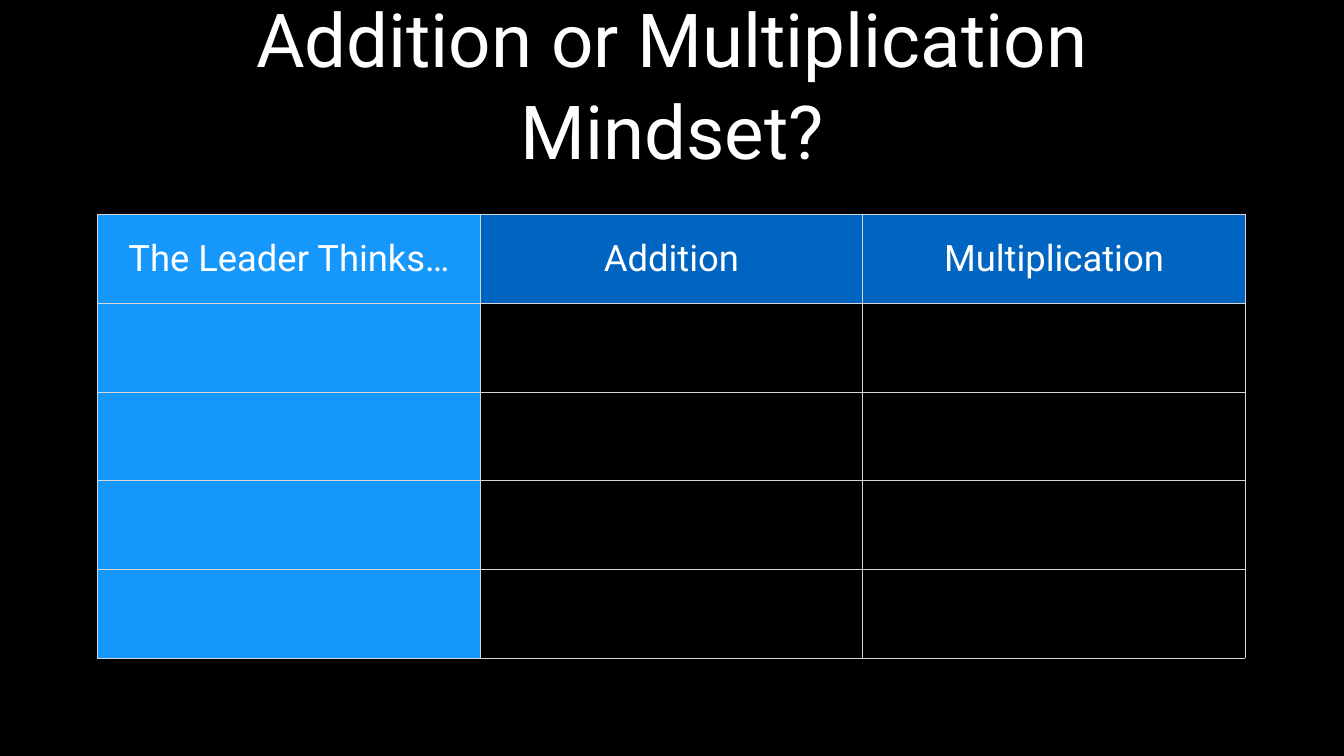
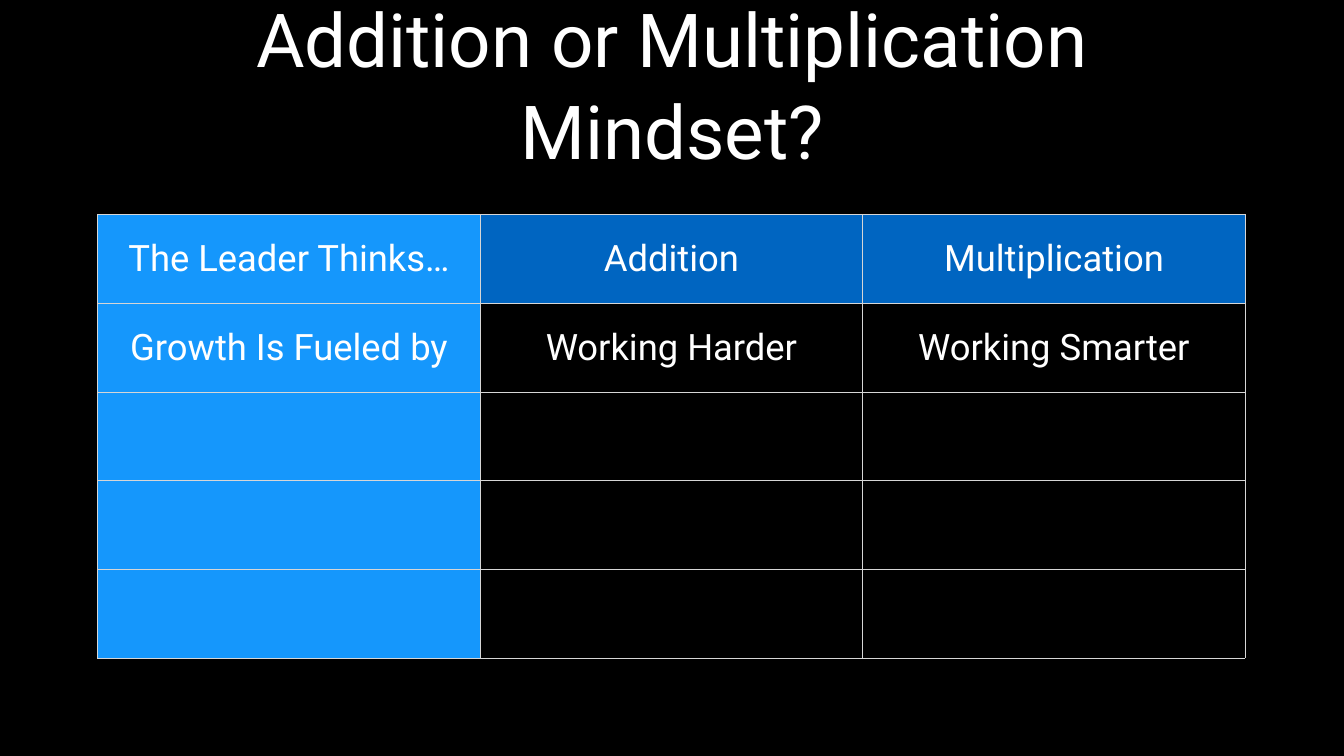
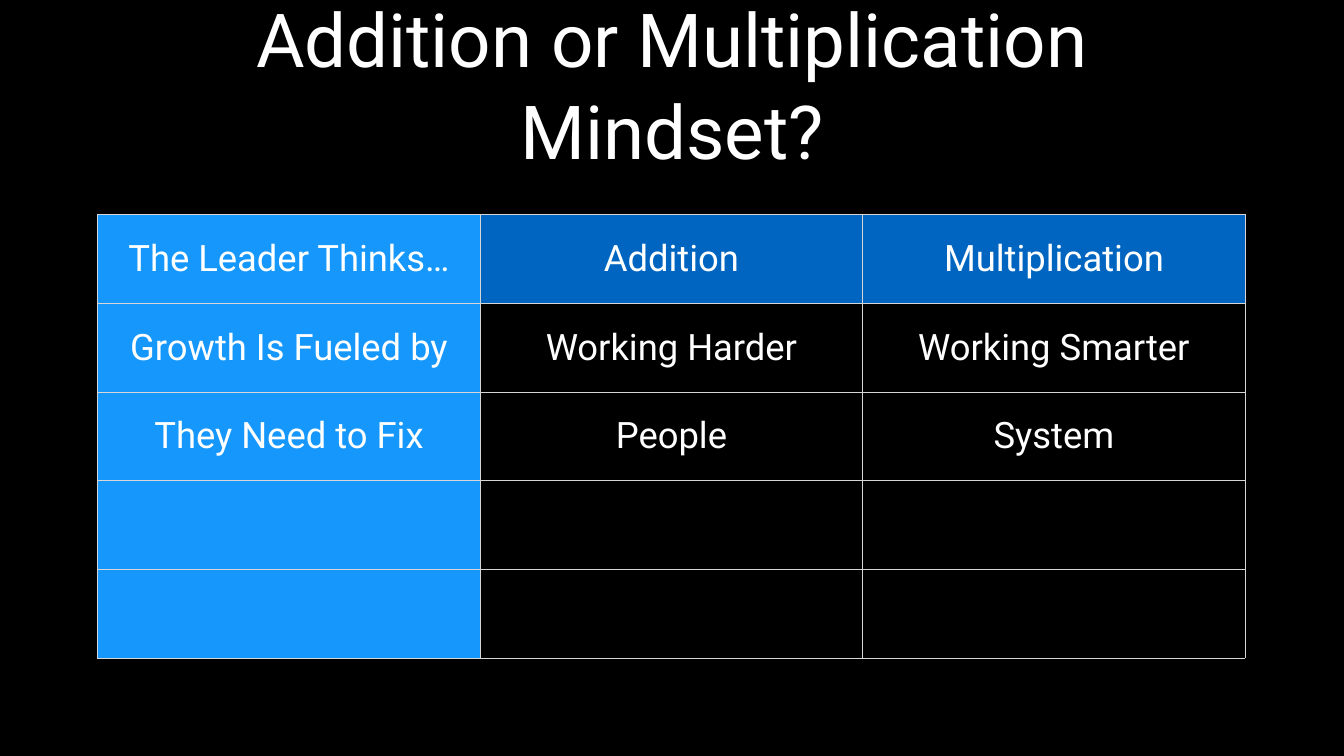
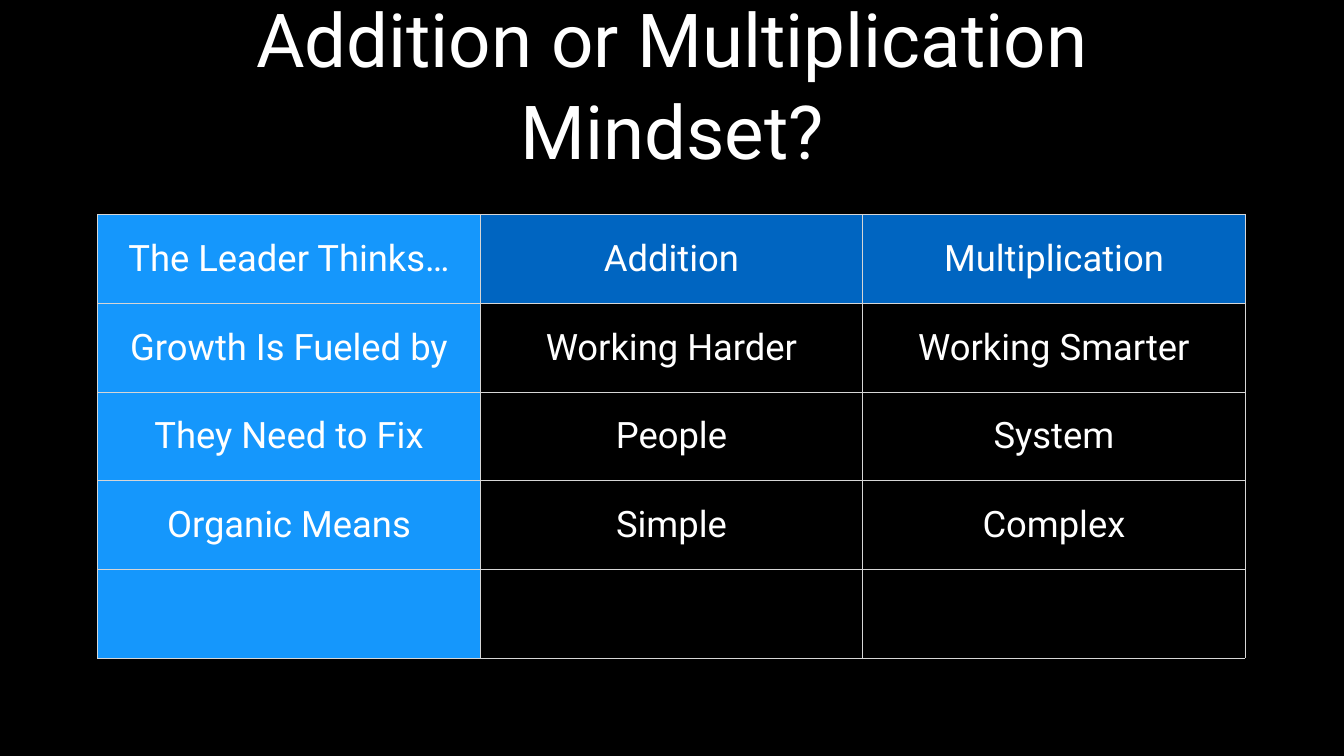
from lxml.etree import SubElement
from pptx import Presentation
from pptx.dml.color import RGBColor
from pptx.enum.text import MSO_ANCHOR, PP_ALIGN
from pptx.oxml.ns import qn
from pptx.util import Inches, Pt

TITLE = "Addition or Multiplication Mindset?"
HEADER = ("The Leader Thinks…", "Addition", "Multiplication")
MINDSETS = [
    ("Growth Is Fueled by", "Working Harder", "Working Smarter"),
    ("They Need to Fix", "People", "System"),
    ("Organic Means", "Simple", "Complex"),
]
BODY_ROWS = 4

FONT = "Roboto"
BLACK, WHITE = "000000", "FFFFFF"
HEADER_BLUE, LABEL_BLUE, GRID_GRAY = "0065C1", "1597FC", "D6D6D6"
TITLE_BOX = (1.85, 0.39, 22.97, 2.5)
TABLE_LEFT, TABLE_TOP = 1.94, 4.26
COLUMN_WIDTH, ROW_HEIGHT = 7.59, 1.76
INSET = Inches(0.06)
FRAME_FORMAT = {
    "margin_left": INSET,
    "margin_top": INSET,
    "margin_right": INSET,
    "margin_bottom": INSET,
    "vertical_anchor": MSO_ANCHOR.MIDDLE,
}


def color(value):
    return RGBColor.from_string(value)


def apply(target, values):
    for name, value in values.items():
        setattr(target, name, value)


def write(frame, text, size):
    paragraph = frame.paragraphs[0]
    paragraph.alignment = PP_ALIGN.CENTER
    run = paragraph.add_run()
    run.text = text
    apply(run.font, {"name": FONT, "size": Pt(size)})
    run.font.color.rgb = color(WHITE)
    return paragraph


def add_title(slide):
    frame = slide.shapes.add_textbox(*map(Inches, TITLE_BOX)).text_frame
    frame.word_wrap = True
    apply(frame, FRAME_FORMAT)
    write(frame, TITLE, 106.4).line_spacing = 1.03


def add_borders(cell):
    properties = cell._tc.get_or_add_tcPr()
    for side in ("lnL", "lnR", "lnT", "lnB"):
        line = SubElement(properties, qn(f"a:{side}"), w=str(Pt(1)))
        fill = SubElement(line, qn("a:solidFill"))
        SubElement(fill, qn("a:srgbClr"), val=GRID_GRAY)


def fill_cell(cell, row, column):
    if row and column:
        cell.fill.background()
    else:
        cell.fill.solid()
        cell.fill.fore_color.rgb = color(HEADER_BLUE if column else LABEL_BLUE)


def add_mindset_table(slide, shown):
    rows = [HEADER] + MINDSETS[:shown]
    row_count, column_count = BODY_ROWS + 1, len(HEADER)
    bounds = (TABLE_LEFT, TABLE_TOP, COLUMN_WIDTH * column_count, ROW_HEIGHT * row_count)
    table = slide.shapes.add_table(row_count, column_count, *map(Inches, bounds)).table
    table.horz_banding = False
    table.first_col = True
    for column in table.columns:
        column.width = Inches(COLUMN_WIDTH)
    for row_index, row in enumerate(table.rows):
        row.height = Inches(ROW_HEIGHT)
        for column_index, cell in enumerate(row.cells):
            apply(cell, FRAME_FORMAT)
            add_borders(cell)
            fill_cell(cell, row_index, column_index)
            if row_index < len(rows):
                write(cell.text_frame, rows[row_index][column_index], 52).font.bold = False


def main():
    presentation = Presentation()
    presentation.slide_width = Inches(26.67)
    presentation.slide_height = Inches(15)
    for shown in range(len(MINDSETS) + 1):
        slide = presentation.slides.add_slide(presentation.slide_layouts[6])
        slide.background.fill.solid()
        slide.background.fill.fore_color.rgb = color(BLACK)
        add_title(slide)
        add_mindset_table(slide, shown)
    presentation.save("out.pptx")


if __name__ == "__main__":
    main()
